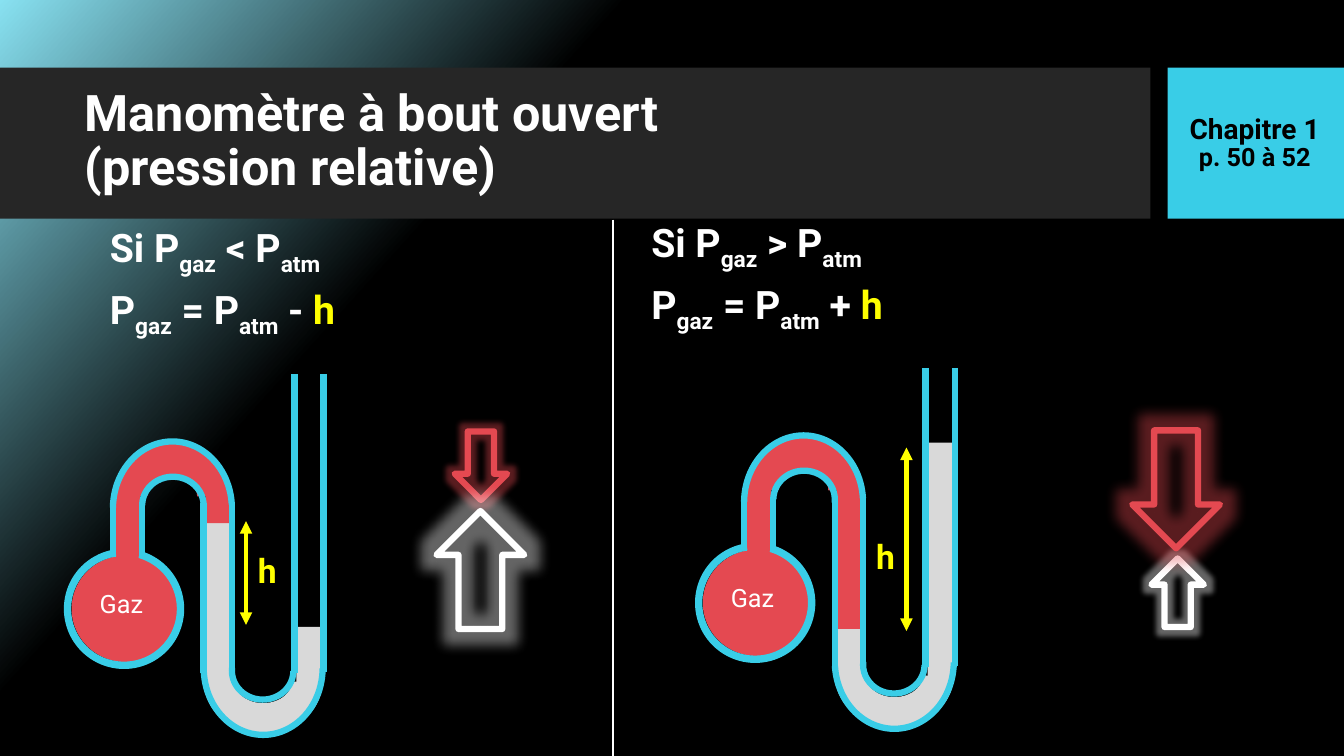
from dataclasses import dataclass

from lxml import etree
from pptx import Presentation
from pptx.dml.color import RGBColor
from pptx.enum import shapes as kinds, text as txt
from pptx.oxml import ns
from pptx.util import Inches, Pt

PRE = kinds.MSO_SHAPE


@dataclass(frozen=True)
class Theme:
    """Hold the colours, type sizes and line widths of the slide."""
    font: str = "Roboto"
    white: str = "FFFFFF"
    black: str = "000000"
    sky: str = "88E1F1"
    glass: str = "39CDE7"
    bar: str = "262626"
    gas: str = "E44951"
    fluid: str = "D9D9D9"
    mark: str = "FFFF00"
    title: float = 36
    body: float = 28
    height: float = 24
    chapter: float = 20
    label: float = 18
    wall: float = 4.5


T = Theme()


def color(code):
    """Turn a hex code into a colour."""
    return RGBColor.from_string(code)


def child(parent, tag, **attrs):
    """Append a drawing element with its attributes."""
    return etree.SubElement(parent, ns.qn(tag), attrs)


def place(shape, box):
    """Move and size a shape."""
    shape.left, shape.top, shape.width, shape.height = map(Inches, box)


def add(home, kind, box, fill=None, line=None, width=T.wall, adj=(), turn=0):
    """Add a preset shape with flat fill and line."""
    shape = home.add_shape(kind, *map(Inches, box))
    shape.shadow.inherit = False
    shape.rotation = turn
    for i, value in enumerate(adj):
        shape.adjustments[i] = value
    if fill:
        shape.fill.solid()
        shape.fill.fore_color.rgb = color(fill)
    else:
        shape.fill.background()
    if line:
        shape.line.color.rgb = color(line)
        shape.line.width = Pt(width)
    else:
        shape.line.fill.background()
    return shape


def rule(home, x, top, low, tint, width, heads=False):
    """Add an upright line, with arrowheads if wanted."""
    line = home.add_connector(
        kinds.MSO_CONNECTOR.STRAIGHT,
        Inches(x), Inches(top), Inches(x), Inches(low))
    line.line.color.rgb = color(tint)
    line.line.width = Pt(width)
    if heads:
        for tag in ("a:headEnd", "a:tailEnd"):
            child(line.line._get_or_add_ln(), tag, type="triangle")
    child(line._element.spPr, "a:effectLst")


def style(run, size, tint, bold=True):
    """Set the font of a run."""
    run.font.name = T.font
    run.font.size = Pt(size)
    run.font.bold = bold
    run.font.color.rgb = color(tint)


def label(home, words, box, size, tint, bold=True):
    """Add a one-line text box."""
    frame = home.add_textbox(*map(Inches, box)).text_frame
    frame.word_wrap = True
    frame.text = words
    style(frame.paragraphs[0].runs[0], size, tint, bold)


def formula(holder, box, anchor, lines):
    """Fill a body with formulas whose subscripts stand between underscores."""
    place(holder, box)
    frame = holder.text_frame
    frame.auto_size = txt.MSO_AUTO_SIZE.NONE
    frame.vertical_anchor = anchor
    for i, line in enumerate(lines):
        para = frame.add_paragraph() if i else frame.paragraphs[0]
        props = para._p.get_or_add_pPr()
        props.set("marL", "0")
        props.set("indent", "0")
        child(props, "a:buNone")
        para.line_spacing = 0.9
        para.space_before = Pt(10 if i else 0)
        for n, part in enumerate(line.split("_")):
            if part:
                run = para.add_run()
                run.text = part
                style(run, T.body, T.mark if part == "h" else T.white)
                if n % 2:
                    run._r.get_or_add_rPr().set("baseline", "-25000")


def gauge(slide, dx, dy, left, right):
    """Draw a gas bulb and its tube, with the two fluid levels."""
    home = slide.shapes.add_group_shape().shapes

    def part(kind, x, y, w, h, **look):
        """Add a part at its shifted place."""
        return add(home, kind, (x + dx, y + dy, w, h), **look)

    bend = (108.66, 0, 0.29)
    part(PRE.OVAL, 0.71, 5.51, 1.08, 1.06, fill=T.gas)
    part(PRE.RECTANGLE, 1.15, 4.9, 0.24, 0.63, fill=T.gas)
    part(PRE.BLOCK_ARC, 1.16, 4.4, 1.1, 1.05, fill=T.gas, adj=bend)
    part(PRE.RECTANGLE, 2.03, left, 0.26, 6.87 - left, fill=T.fluid)
    part(PRE.BLOCK_ARC, 2.02, 6.23, 1.18, 1.05, fill=T.fluid,
         adj=bend, turn=180)
    part(PRE.RECTANGLE, 2.94, right, 0.25, 6.87 - right, fill=T.fluid)
    part(PRE.RECTANGLE, 2.04, 4.9, 0.24, left - 4.9, fill=T.gas)
    part(PRE.BLOCK_ARC, 0.64, 5.45, 1.18, 1.18, fill=T.glass, line=T.glass,
         width=1, adj=(171.93, 156.56, 0.05))
    for x, top, low in ((1.12, 5, 5.53), (1.41, 4.99, 5.52),
                        (2.02, 4.99, 6.68), (2.3, 4.99, 6.68),
                        (2.92, 3.71, 6.68), (3.21, 3.71, 6.67)):
        rule(home, x + dx, top + dy, low + dy, T.glass, T.wall)
    for outer, inner, turn in (((1.12, 4.38), (1.41, 4.73), 0),
                               ((2.02, 5.96), (2.3, 6.37), 180)):
        part(PRE.ARC, *outer, 1.18, 1.33, line=T.glass,
             adj=(108.4, 213.67), turn=turn)
        part(PRE.ARC, *inner, 0.61, 0.57, line=T.glass,
             adj=(108.4, 3.5), turn=turn)
    label(home, "Gaz", (0.89 + dx, 5.79 + dy, 0.69, 0.41),
          T.label, T.white, False)


def push(slide, kind, box, tint, reach):
    """Draw a glowing block arrow for a pressure."""
    arrow = add(slide.shapes, kind, box, line=tint)
    effects = arrow._element.spPr.find(ns.qn("a:effectLst"))
    glow = child(effects, "a:glow", rad=str(Pt(reach)))
    child(child(glow, "a:srgbClr", val=tint), "a:alpha", val="40000")


def header(slide):
    """Draw the title bar and the chapter tile."""
    title = slide.shapes.title
    for box, fill in (((0, 0.67, 11.41, 1.5), T.bar),
                      ((11.58, 0.67, 1.75, 1.5), T.glass)):
        band = add(slide.shapes, PRE.RECTANGLE, box, fill)
        title.element.addprevious(band.element)
    place(title, (0.74, 0.82, 10.51, 1.18))
    title.text_frame.text = "Manomètre à bout ouvert\v(pression relative)"
    title.text_frame.auto_size = txt.MSO_AUTO_SIZE.NONE
    title.text_frame.vertical_anchor = txt.MSO_ANCHOR.MIDDLE
    para = title.text_frame.paragraphs[0]
    para.alignment = txt.PP_ALIGN.LEFT
    para.line_spacing = 0.9
    for run in para.runs:
        style(run, T.title, T.white)
    tile = slide.shapes.add_textbox(*map(Inches, (11.56, 0.67, 1.77, 1.51)))
    frame = tile.text_frame
    frame.word_wrap = True
    frame.vertical_anchor = txt.MSO_ANCHOR.MIDDLE
    frame.text = "Chapitre 1\np. 50 à 52"
    for para, size in zip(frame.paragraphs, (T.chapter, T.label)):
        para.alignment = txt.PP_ALIGN.CENTER
        para.line_spacing = 0.9
        style(para.runs[0], size, T.black)


def main():
    """Build the slide and save it."""
    deck = Presentation()
    deck.slide_width, deck.slide_height = Inches(13.33), Inches(7.5)
    slide = deck.slides.add_slide(deck.slide_layouts[3])
    back = slide.background.fill
    back.gradient()
    back.gradient_angle = 318
    for stop, tint, spot in zip(back.gradient_stops, (T.sky, T.black),
                                (0, 0.31)):
        stop.color.rgb = color(tint)
        stop.position = spot
    header(slide)
    formula(slide.placeholders[1], (0.99, 2.22, 4.89, 1.1),
            txt.MSO_ANCHOR.MIDDLE,
            ("Si P_gaz_ < P_atm", "P_gaz_ = P_atm_ - __h"))
    formula(slide.placeholders[2], (6.36, 2.22, 4.89, 1.1),
            txt.MSO_ANCHOR.BOTTOM,
            ("Si P_gaz_ > P_atm", "P_gaz_ = P_atm_ + __h"))
    push(slide, PRE.DOWN_ARROW, (4.51, 4.28, 0.52, 0.68), T.gas, 8)
    push(slide, PRE.UP_ARROW, (4.33, 5.07, 0.87, 1.17), T.white, 18)
    push(slide, PRE.UP_ARROW, (11.42, 5.54, 0.52, 0.68), T.white, 8)
    push(slide, PRE.DOWN_ARROW, (11.23, 4.27, 0.87, 1.17), T.gas, 18)
    rule(slide.shapes, 6.08, 2.18, 7.5, T.white, 0.75)
    gauge(slide, 0, 0, 5.19, 6.22)
    gauge(slide, 6.26, -0.06, 6.3, 4.45)
    for x, top, low, left, high in ((2.44, 5.17, 6.2, 2.46, 5.41),
                                    (8.99, 4.44, 6.26, 8.59, 5.27)):
        rule(slide.shapes, x, top, low, T.mark, 3, True)
        label(slide.shapes, "h", (left, high, 0.39, 0.5), T.height, T.mark)
    deck.save("out.pptx")


if __name__ == "__main__":
    main()
